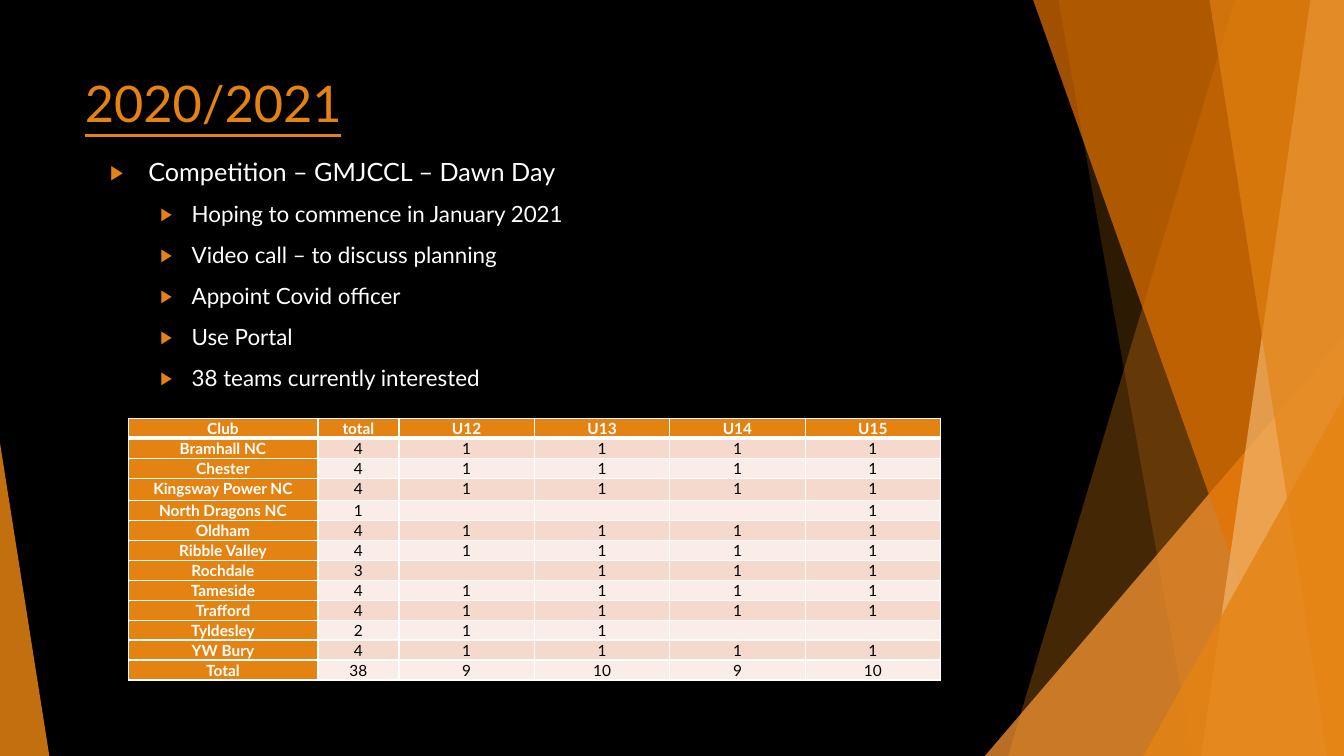
from dataclasses import dataclass

from lxml import etree
from pptx import Presentation
from pptx import util as u
from pptx.dml.color import RGBColor
from pptx.enum import shapes, text
from pptx.oxml import ns


@dataclass(frozen=True)
class Theme:
    font: str = "Lato"
    background: str = "000000"
    accent: str = "E48312"
    light: str = "FFFFFF"
    dark: str = "000000"
    band: str = "F5D9CC"
    pale_band: str = "FAEDE7"
    amber: str = "FF9933"
    deep_orange: str = "E57300"
    sand: str = "F3B56C"
    title_size: int = 36
    list_sizes: tuple = (18, 16)
    table_size: int = 11


THEME = Theme()
COLUMNS, ROWS = 160, 90
BULLET_INDENTS = ((0.38, -0.38), (0.81, -0.31))

BULLETS = [
    (0, "Competition – GMJCCL – Dawn Day"),
    (1, "Hoping to commence in January 2021"),
    (1, "Video call – to discuss planning"),
    (1, "Appoint Covid officer"),
    (1, "Use Portal"),
    (1, "38 teams currently interested"),
]

CLUB_TEAMS = [
    ("Club", "total", "U12", "U13", "U14", "U15"),
    ("Bramhall NC", 4, 1, 1, 1, 1),
    ("Chester", 4, 1, 1, 1, 1),
    ("Kingsway Power NC", 4, 1, 1, 1, 1),
    ("North Dragons NC", 1, "", "", "", 1),
    ("Oldham", 4, 1, 1, 1, 1),
    ("Ribble Valley", 4, 1, 1, 1, 1),
    ("Rochdale", 3, "", 1, 1, 1),
    ("Tameside", 4, 1, 1, 1, 1),
    ("Trafford", 4, 1, 1, 1, 1),
    ("Tyldesley", 2, 1, 1, "", ""),
    ("YW Bury", 4, 1, 1, 1, 1),
    ("Total", 38, 9, 10, 9, 10),
]


def apply(target, values):
    for name, value in values.items():
        setattr(target, name, value)


def child(parent, tag, **attributes):
    return etree.SubElement(parent, ns.qn(f"a:{tag}"), attributes)


class SlideBuilder:
    def __init__(self, presentation, theme):
        self.theme = theme
        self.column = presentation.slide_width / COLUMNS
        self.row = presentation.slide_height / ROWS
        self.slide = presentation.slides.add_slide(presentation.slide_layouts[1])
        self.paint(self.slide.background.fill, theme.background)

    def box(self, left, top, width, height):
        return (round(left * self.column), round(top * self.row),
                round(width * self.column), round(height * self.row))

    def paint(self, fill, color, opacity=100):
        fill.solid()
        fill.fore_color.rgb = RGBColor.from_string(color)
        if opacity < 100:
            color_element = fill._xPr.find(f".//{ns.qn('a:srgbClr')}")
            child(color_element, "alpha", val=str(opacity * 1000))

    def decorate(self, shape, color, opacity):
        shape.shadow.inherit = False
        shape.line.fill.background()
        self.paint(shape.fill, color, opacity)

    def blade(self, top_column, bottom_column, color, opacity):
        builder = self.slide.shapes.build_freeform(
            top_column, 0, scale=(self.column, self.row))
        builder.add_line_segments(
            [(COLUMNS, 0), (COLUMNS, ROWS), (bottom_column, ROWS)], close=True)
        self.decorate(builder.convert_to_shape(), color, opacity)

    def corner(self, left, top, width, apex, color, opacity):
        shape = self.slide.shapes.add_shape(
            shapes.MSO_SHAPE.ISOSCELES_TRIANGLE,
            *self.box(left, top, width, ROWS - top))
        shape.adjustments[0] = apex
        self.decorate(shape, color, opacity)

    def add_text(self, paragraph, content, size, color, **font_values):
        run = paragraph.add_run()
        run.text = content
        apply(run.font, {"name": self.theme.font, "size": u.Pt(size), **font_values})
        run.font.color.rgb = RGBColor.from_string(color)

    def placeholder(self, index, box):
        shape = self.slide.placeholders[index]
        apply(shape, dict(zip(("left", "top", "width", "height"), self.box(*box))))
        apply(shape.text_frame, {
            "word_wrap": True,
            "auto_size": text.MSO_AUTO_SIZE.NONE,
            "vertical_anchor": text.MSO_ANCHOR.TOP,
        })
        shape._element.getparent().append(shape._element)
        return shape.text_frame

    def title(self, content, box):
        paragraph = self.placeholder(0, box).paragraphs[0]
        paragraph.alignment = text.PP_ALIGN.LEFT
        self.add_text(paragraph, content, self.theme.title_size, self.theme.accent,
                      underline=True)

    def bullet_list(self, items, box):
        frame = self.placeholder(1, box)
        for index, (level, content) in enumerate(items):
            paragraph = frame.add_paragraph() if index else frame.paragraphs[0]
            properties = paragraph._p.get_or_add_pPr()
            margin, indent = BULLET_INDENTS[level]
            properties.set("marL", str(u.Inches(margin)))
            properties.set("indent", str(u.Inches(indent)))
            child(child(properties, "buClr"), "srgbClr", val=self.theme.accent)
            child(properties, "buSzPct", val="80000")
            child(properties, "buFont", typeface=self.theme.font)
            child(properties, "buChar", char="▶")
            apply(paragraph, {
                "level": level,
                "line_spacing": 1.0,
                "space_before": u.Pt(10 if index else 0),
                "space_after": u.Pt(0),
            })
            self.add_text(paragraph, content, self.theme.list_sizes[level],
                          self.theme.light)

    def borders(self, cell, **widths):
        properties = cell._tc.get_or_add_tcPr()
        for index, side in enumerate("LRTB"):
            line = etree.Element(ns.qn(f"a:ln{side}"),
                                 w=str(u.Pt(widths.get(side, 1))))
            child(child(line, "solidFill"), "srgbClr", val=self.theme.light)
            properties.insert(index, line)

    def table_cell(self, cell, content, row, column):
        heading = row == 0 or column == 0
        band = self.theme.band if row % 2 else self.theme.pale_band
        self.paint(cell.fill, self.theme.accent if heading else band)
        self.borders(cell, **({"B": 3} if row == 0 else {"T": 3} if row == 1 else {}))
        apply(cell, {
            "margin_left": u.Inches(0.07), "margin_right": u.Inches(0.07),
            "margin_top": 0, "margin_bottom": 0,
        })
        paragraph = cell.text_frame.paragraphs[0]
        apply(paragraph, {
            "alignment": text.PP_ALIGN.CENTER,
            "line_spacing": 1.07,
            "space_after": u.Pt(8),
        })
        if content == "":
            child(paragraph._p, "endParaRPr", sz=str(self.theme.table_size * 100))
        else:
            self.add_text(paragraph, str(content), self.theme.table_size,
                          self.theme.light if heading else self.theme.dark,
                          bold=heading)

    def table(self, records, left, top, widths, heights):
        table = self.slide.shapes.add_table(
            len(records), len(widths),
            *self.box(left, top, sum(widths), sum(heights))).table
        apply(table, {"first_row": False, "horz_banding": False})
        for column, width in zip(table.columns, widths):
            column.width = round(width * self.column)
        for row, height in zip(table.rows, heights):
            row.height = round(height * self.row)
        for row, record in enumerate(records):
            for column, content in enumerate(record):
                self.table_cell(table.cell(row, column), content, row, column)


def main():
    presentation = Presentation()
    apply(presentation, {"slide_width": u.Inches(13.33),
                         "slide_height": u.Inches(7.5)})
    builder = SlideBuilder(presentation, THEME)
    builder.blade(147.36, 120.48, THEME.accent, 30)
    builder.blade(126, 142, THEME.accent, 20)
    builder.corner(117.24, 40, 42.76, 1, THEME.amber, 72)
    builder.blade(122.52, 155, THEME.deep_orange, 70)
    builder.blade(156.36, 143, THEME.sand, 70)
    builder.blade(143.52, 158.2, THEME.accent, 65)
    builder.corner(136.1, 47.2, 23.9, 1, THEME.accent, 80)
    builder.corner(0, 52.7, 5.88, 0, THEME.accent, 85)
    builder.title("2020/2021", (8.9, 8, 112.8, 17.3))
    builder.bullet_list(BULLETS, (11.9, 18, 112.8, 50.9))
    row_heights = [2.64 if record[0] == "Kingsway Power NC" else 2.3
                   for record in CLUB_TEAMS]
    builder.table(CLUB_TEAMS, 15.25, 49.8, [22.6, 9.65] + [16.12] * 4, row_heights)
    presentation.save("out.pptx")


if __name__ == "__main__":
    main()
